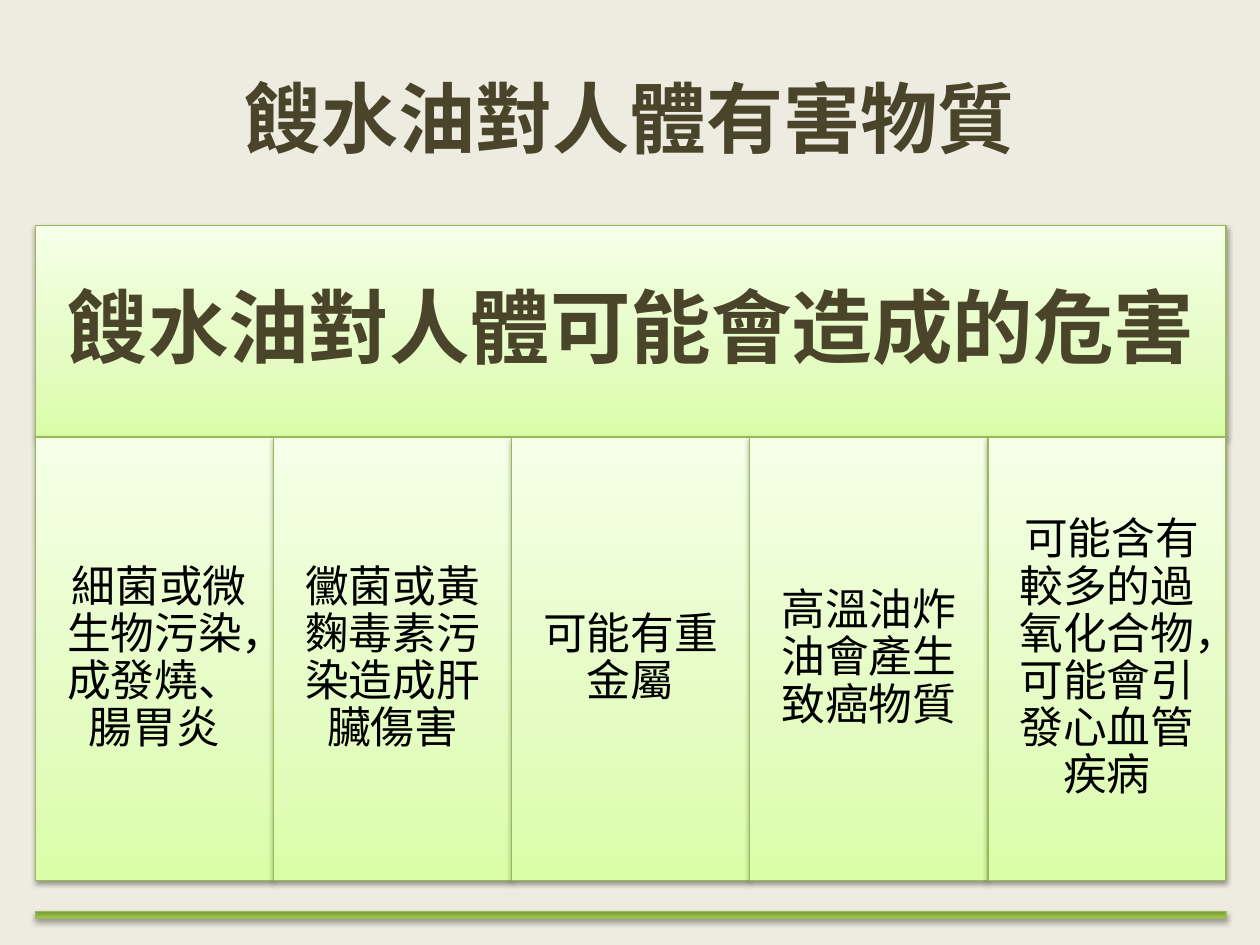
from collections import namedtuple

from lxml.etree import SubElement
from pptx import Presentation
from pptx.dml.color import RGBColor
from pptx.enum.shapes import MSO_SHAPE
from pptx.enum.text import MSO_ANCHOR, PP_ALIGN
from pptx.oxml import parse_xml
from pptx.oxml.ns import nsdecls, qn
from pptx.util import Inches, Pt

Box = namedtuple("Box", "left top width height")

FONT = "Noto Sans CJK SC"
COLORS = {
    "background": "EEECE1",
    "heading": "4A452A",
    "body": "000000",
    "edge": "98B955",
    "shadow": "000000",
}
PANEL_GRADIENT = [(0, "DAFDA7"), (35, "E4FCC2"), (100, "F5FFE7")]
BAR_GRADIENT = [(0, "779737"), (80, "9BC348"), (100, "9DC746")]

SLIDE_WIDTH, SLIDE_HEIGHT = Inches(10), Inches(7.5)
TITLE_BOX = Box(Inches(0.5), Inches(0.3), Inches(9), Inches(1.25))
DIAGRAM_BOX = Box(Inches(0.28), Inches(1.79), Inches(9.45), Inches(5.5))
# Shares of the diagram's height
HEADER_SHARE, COLUMN_SHARE, BAR_SHARE = 0.305, 0.64, 0.01

TITLE = "餿水油對人體有害物質"
HEADER = "餿水油對人體可能會造成的危害"
HAZARDS = [
    [(" ", 24), ("細菌或微生物污染，成發燒、腸胃炎", 25)],
    [("黴菌或黃麴毒素污染造成肝臟傷害", 25)],
    [("可能有重金屬", 25)],
    [("高溫油炸油會產生致癌物質", 25)],
    [(" ", 24), ("可能含有較多的過氧化合物，可能會引發心血管疾病", 25)],
]


def write_text(shape, runs, color, bold=False, inset=0.1, line_spacing=None):
    """Fill the shape with one centred paragraph of (text, size) runs."""
    frame = shape.text_frame
    frame.word_wrap = True
    frame.vertical_anchor = MSO_ANCHOR.MIDDLE
    frame.margin_left = frame.margin_right = Inches(inset)
    frame.margin_top = frame.margin_bottom = Inches(inset)
    paragraph = frame.paragraphs[0]
    paragraph.alignment = PP_ALIGN.CENTER
    paragraph.line_spacing = line_spacing
    for text, size in runs:
        run = paragraph.add_run()
        run.text = text
        run.font.size = Pt(size)
        run.font.bold = bold
        run.font.name = FONT
        run.font.color.rgb = RGBColor.from_string(COLORS[color])
        east_asian = SubElement(run.font._element, qn("a:ea"))
        east_asian.set("typeface", FONT)


def set_gradient(shape, stops, angle):
    stop_xml = "".join(
        f'<a:gs pos="{position * 1000}"><a:srgbClr val="{color}"/></a:gs>'
        for position, color in stops
    )
    gradient = parse_xml(
        f'<a:gradFill {nsdecls("a")} rotWithShape="1"><a:gsLst>{stop_xml}</a:gsLst>'
        f'<a:lin ang="{angle * 60000}" scaled="0"/></a:gradFill>'
    )
    shape._element.spPr.find(qn("a:prstGeom")).addnext(gradient)


def set_shadow(shape, opacity):
    shape.shadow.inherit = False
    effects = shape._element.spPr.find(qn("a:effectLst"))
    effects.append(parse_xml(
        f'<a:outerShdw {nsdecls("a")} blurRad="40000" dist="20000" dir="5400000" '
        f'rotWithShape="0"><a:srgbClr val="{COLORS["shadow"]}">'
        f'<a:alpha val="{opacity * 1000}"/></a:srgbClr></a:outerShdw>'
    ))


def add_panel(slide, box, stops=PANEL_GRADIENT, angle=270, opacity=38):
    shape = slide.shapes.add_shape(MSO_SHAPE.RECTANGLE, *map(round, box))
    shape.line.color.rgb = RGBColor.from_string(COLORS["edge"])
    shape.line.width = Pt(0.75)
    set_gradient(shape, stops, angle)
    set_shadow(shape, opacity)
    return shape


def add_title(slide, box):
    write_text(slide.shapes.add_textbox(*box), [(TITLE, 44)], "heading", bold=True)


def add_hazard_diagram(slide, box):
    """Header across the top, equal columns below it, thin bar at the foot."""
    header_height = box.height * HEADER_SHARE
    bar_height = box.height * BAR_SHARE
    column_width = box.width / len(HAZARDS)

    header = add_panel(slide, box._replace(height=header_height))
    write_text(header, [(HEADER, 46)], "heading", bold=True,
               inset=0.19, line_spacing=0.9)

    for index, runs in enumerate(HAZARDS):
        column = add_panel(slide, Box(
            box.left + index * column_width, box.top + header_height,
            column_width, box.height * COLUMN_SHARE,
        ))
        write_text(column, runs, "body", line_spacing=0.9)

    bar_top = box.top + box.height - bar_height
    add_panel(slide, box._replace(top=bar_top, height=bar_height),
              BAR_GRADIENT, angle=90, opacity=35)


def main():
    presentation = Presentation()
    presentation.slide_width, presentation.slide_height = SLIDE_WIDTH, SLIDE_HEIGHT
    slide = presentation.slides.add_slide(presentation.slide_layouts[6])
    slide.background.fill.solid()
    slide.background.fill.fore_color.rgb = RGBColor.from_string(COLORS["background"])
    add_title(slide, TITLE_BOX)
    add_hazard_diagram(slide, DIAGRAM_BOX)
    presentation.save("out.pptx")


if __name__ == "__main__":
    main()
